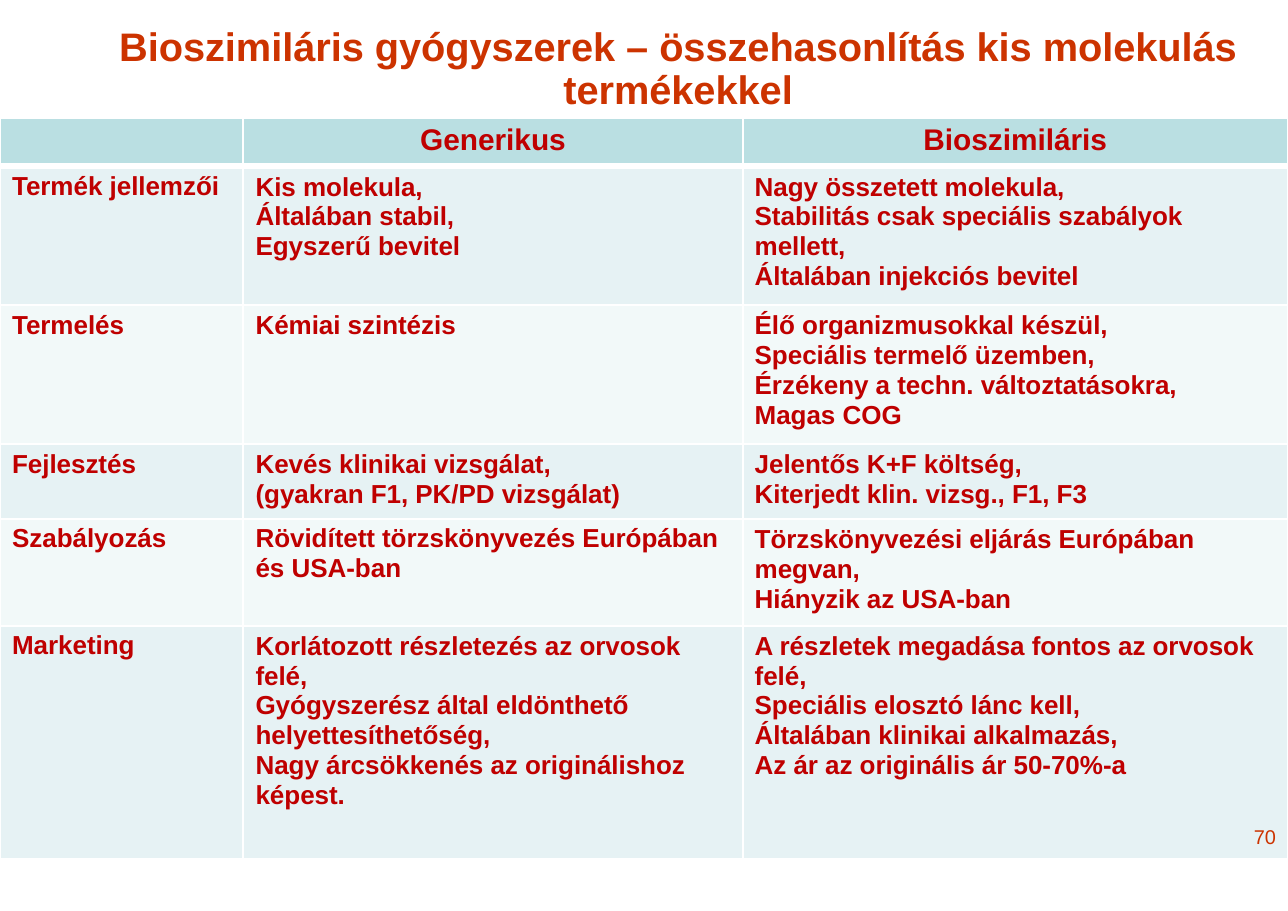
from lxml.etree import SubElement
from pptx import Presentation
from pptx.dml.color import RGBColor
from pptx.enum.text import MSO_ANCHOR, MSO_AUTO_SIZE, PP_ALIGN
from pptx.oxml.ns import qn
from pptx.util import Inches, Pt

COLORS = {
    "title": "CC3300",
    "text": "BF0000",
    "header": "BADFE2",
    "odd_row": "E6F2F4",
    "even_row": "F2F9F9",
    "border": "FFFFFF",
}
FONT = "Arial"
TITLE = "Bioszimiláris gyógyszerek – összehasonlítás kis molekulás termékekkel"
PAGE_NUMBER = "70"
COLUMN_WIDTHS = [2.21, 4.53, 4.95]
ROW_HEIGHTS = [0.44, 1.26, 1.26, 0.68, 0.97, 2.12]
ROWS = [
    ([], ["Generikus"], ["Bioszimiláris"]),
    (
        ["Termék jellemzői"],
        ["Kis molekula,", "Általában stabil,", "Egyszerű bevitel"],
        [
            "Nagy összetett molekula,",
            "Stabilitás csak speciális szabályok mellett,",
            "Általában injekciós bevitel",
        ],
    ),
    (
        ["Termelés"],
        ["Kémiai szintézis"],
        [
            "Élő organizmusokkal készül,",
            "Speciális termelő üzemben,",
            "Érzékeny a techn. változtatásokra,",
            "Magas COG",
        ],
    ),
    (
        ["Fejlesztés"],
        ["Kevés klinikai vizsgálat,", "(gyakran F1, PK/PD vizsgálat)"],
        ["Jelentős K+F költség,", "Kiterjedt klin. vizsg., F1, F3"],
    ),
    (
        ["Szabályozás"],
        ["Rövidített törzskönyvezés Európában és USA-ban"],
        ["Törzskönyvezési eljárás Európában megvan,", "Hiányzik az USA-ban"],
    ),
    (
        ["Marketing"],
        [
            "Korlátozott részletezés az orvosok felé,",
            "Gyógyszerész által eldönthető helyettesíthetőség,",
            "Nagy árcsökkenés az originálishoz képest.",
        ],
        [
            "A részletek megadása fontos az orvosok felé,",
            "Speciális elosztó lánc kell,",
            "Általában klinikai alkalmazás,",
            "Az ár az originális ár 50-70%-a",
        ],
    ),
]


def add_span(para, text, size, color, bold=True):
    span = para.add_run()
    span.text = text
    span.font.name = FONT
    span.font.size = Pt(size)
    span.font.bold = bold
    span.font.color.rgb = RGBColor.from_string(COLORS[color])
    span.font._element.set("spc", "-5")


def add_title(page, left, top, width, height):
    title = page.shapes.title
    title.left, title.top = Inches(left), Inches(top)
    title.width, title.height = Inches(width), Inches(height)
    frame = title.text_frame
    frame.word_wrap = True
    frame.auto_size = MSO_AUTO_SIZE.NONE
    frame.vertical_anchor = MSO_ANCHOR.TOP
    frame.margin_left = frame.margin_right = frame.margin_bottom = 0
    frame.margin_top = Inches(0.06)
    para = frame.paragraphs[0]
    para.alignment = PP_ALIGN.CENTER
    para.line_spacing = Pt(28)
    add_span(para, TITLE, 26, "title")


def set_borders(cell, top, bottom):
    properties = cell._tc.get_or_add_tcPr()
    widths = {"a:lnL": 1.5, "a:lnR": 1.5, "a:lnT": top, "a:lnB": bottom}
    for position, (tag, width) in enumerate(widths.items()):
        line = SubElement(properties, qn(tag), w=str(Pt(width)))
        fill = SubElement(line, qn("a:solidFill"))
        SubElement(fill, qn("a:srgbClr"), val=COLORS["border"])
        properties.insert(position, line)


def fill_cell(cell, lines, row):
    is_header = row == 0
    cell.margin_left = cell.margin_right = cell.margin_bottom = 0
    cell.margin_top = Inches(0.05)
    cell.fill.solid()
    color = "header" if is_header else "odd_row" if row % 2 else "even_row"
    cell.fill.fore_color.rgb = RGBColor.from_string(COLORS[color])
    set_borders(cell, 4.5 if row == 1 else 1.5, 4.5 if is_header else 1.5)
    frame = cell.text_frame
    for index, text in enumerate(lines):
        para = frame.add_paragraph() if index else frame.paragraphs[0]
        if is_header:
            para.alignment = PP_ALIGN.CENTER
        else:
            para.line_spacing = 1.02 if len(lines) > 1 else 1.0
            indents = para._p.get_or_add_pPr()
            indents.set("marL", str(Inches(0.11)))
            indents.set("marR", str(Inches(0.15)))
        add_span(para, text, 19.5 if is_header else 17, "text")


def add_page_number(cell):
    para = cell.text_frame.add_paragraph()
    para.alignment = PP_ALIGN.RIGHT
    para.line_spacing = Pt(9.1)
    para.space_before = Pt(36)
    para._p.get_or_add_pPr().set("marR", str(Inches(0.11)))
    add_span(para, PAGE_NUMBER, 13, "title", bold=False)


def add_comparison(page, left, top):
    frame = page.shapes.add_table(
        len(ROW_HEIGHTS), len(COLUMN_WIDTHS), Inches(left), Inches(top),
        Inches(sum(COLUMN_WIDTHS)), Inches(sum(ROW_HEIGHTS)),
    )
    table = frame.table
    for column, width in zip(table.columns, COLUMN_WIDTHS):
        column.width = Inches(width)
    for row, (height, contents) in enumerate(zip(ROW_HEIGHTS, ROWS)):
        table.rows[row].height = Inches(height)
        for column, lines in enumerate(contents):
            fill_cell(table.cell(row, column), lines, row)
    add_page_number(table.cell(len(ROWS) - 1, len(COLUMN_WIDTHS) - 1))


def main():
    deck = Presentation()
    deck.slide_width, deck.slide_height = Inches(11.69), Inches(8.27)
    page = deck.slides.add_slide(deck.slide_layouts[5])
    add_title(page, 1.07, 0.18, 10.17, 0.85)
    add_comparison(page, 0, 1.07)
    deck.save("out.pptx")


if __name__ == "__main__":
    main()
